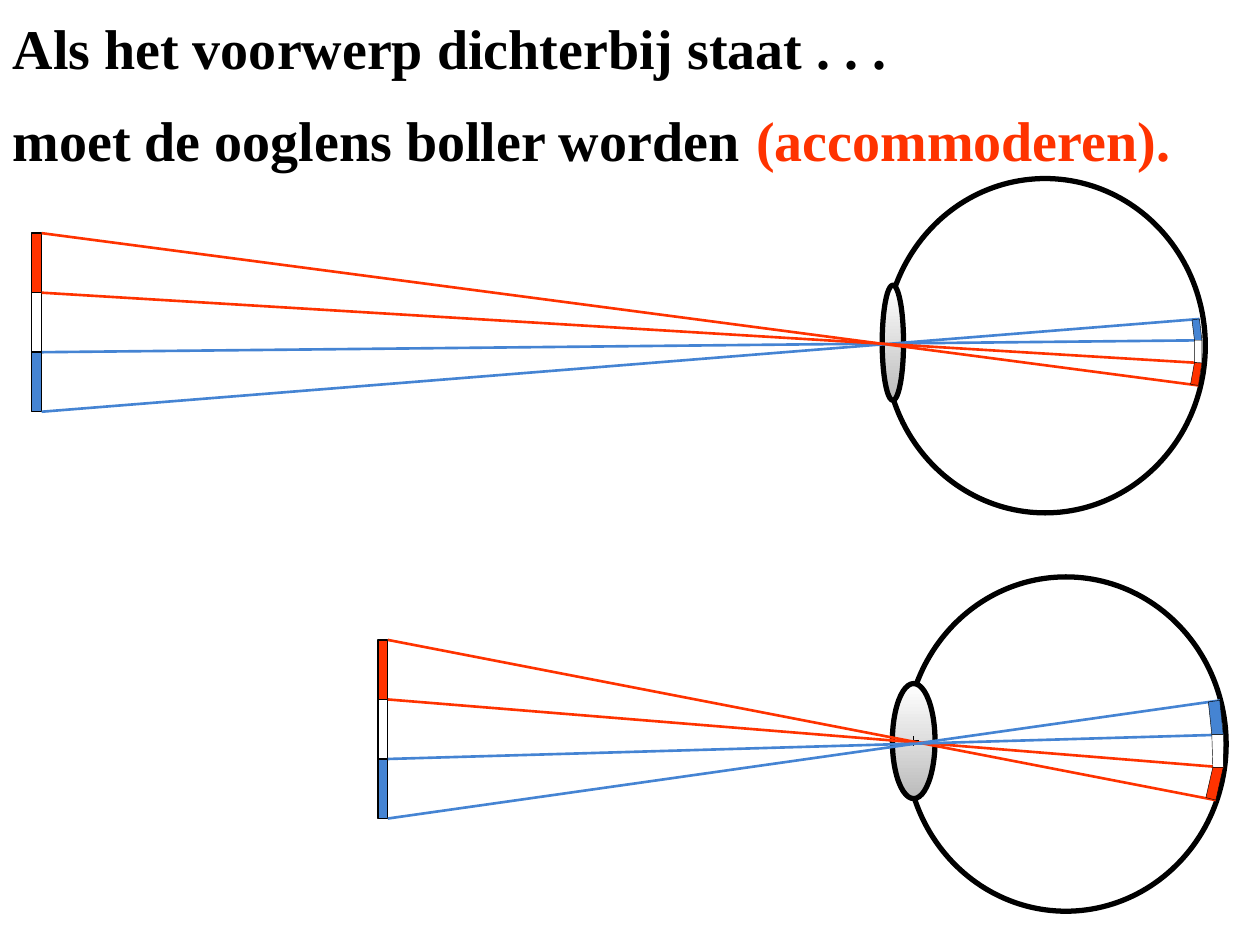
import pptx
import pptx.dml.color
import pptx.enum.shapes
import pptx.enum.text
import pptx.oxml
import pptx.oxml.ns
import pptx.util

Cm = pptx.util.Cm
Pt = pptx.util.Pt
SHAPES = pptx.enum.shapes.MSO_SHAPE

COLORS = {"black": "000000", "white": "FFFFFF", "gray": "BBBBBB",
          "red": "FF3300", "blue": "4584D3"}
BANDS = ("red", "white", "blue")
BAND_HEIGHT = 1.2
BAND_WIDTH = 0.2
EYE_RADII = (3.23, 3.37)
LENS_OFFSET = (-3.07, -0.06)
LENS_HEIGHT = 2.32

# Rays are numbered from the top of the object; retina edges run from top to bottom.
FAR = {
    "object": (0.64, 4.7), "eye": (21.07, 6.97), "lens_width": 0.43,
    "rays_behind": (2,), "rays_in_front": (0, 3, 1), "cross": False,
    "inner": ((24.03, 6.45), (24.08, 6.86), (24.08, 7.31), (24.0, 7.75)),
    "outer": ((24.18, 6.43), (24.23, 6.86), (24.23, 7.32), (24.16, 7.77)),
}
NEAR = {
    "object": (7.62, 12.9), "eye": (21.49, 15.0), "lens_width": 0.86,
    "rays_behind": (), "rays_in_front": (0, 3, 1, 2), "cross": True,
    "inner": ((24.36, 14.15), (24.43, 14.81), (24.45, 15.47), (24.31, 16.08)),
    "outer": ((24.59, 14.12), (24.66, 14.81), (24.66, 15.47), (24.51, 16.13)),
}


def color(name):
    return pptx.dml.color.RGBColor.from_string(COLORS[name])


class EyeSlide:
    """Holds the slide being drawn and its text style."""

    font = {"name": "Times New Roman", "bold": True}
    frame = {"word_wrap": True,
             "auto_size": pptx.enum.text.MSO_AUTO_SIZE.NONE,
             "vertical_anchor": pptx.enum.text.MSO_ANCHOR.TOP}
    spacing = {"alignment": pptx.enum.text.PP_ALIGN.LEFT,
               "space_before": Pt(0), "line_spacing": 1.0}

    def __init__(self, slide):
        self.slide = slide

    def text(self, placeholder, top, height, runs):
        box = {"left": 0, "top": Cm(top), "width": Cm(25.4), "height": Cm(height)}
        paragraph = placeholder.text_frame.paragraphs[0]
        properties = paragraph._p.get_or_add_pPr()
        properties.set("marL", "0")
        properties.set("indent", "0")
        properties.append(pptx.oxml.parse_xml(
            "<a:buNone %s/>" % pptx.oxml.ns.nsdecls("a")))
        for target, values in ((placeholder, box),
                               (placeholder.text_frame, self.frame),
                               (paragraph, self.spacing)):
            for name, value in values.items():
                setattr(target, name, value)
        for words, size, color_name in runs:
            run = paragraph.add_run()
            run.text = words
            for name, value in {**self.font, "size": Pt(size)}.items():
                setattr(run.font, name, value)
            run.font.color.rgb = color(color_name)

    def outline(self, shape, width, fill=None):
        shape.shadow.inherit = False
        shape.line.width = Pt(width)
        shape.line.color.rgb = color("black")
        if fill:
            shape.fill.solid()
            shape.fill.fore_color.rgb = color(fill)
        else:
            shape.fill.background()

    def preset(self, kind, left, top, width, height, line_width, fill=None):
        shape = self.slide.shapes.add_shape(
            kind, Cm(left), Cm(top), Cm(width), Cm(height))
        self.outline(shape, line_width, fill)
        return shape

    def line(self, start, end, color_name, width):
        connector = self.slide.shapes.add_connector(
            pptx.enum.shapes.MSO_CONNECTOR.STRAIGHT, *map(Cm, (*start, *end)))
        connector.line.color.rgb = color(color_name)
        connector.line.width = Pt(width)
        connector._element.spPr.append(pptx.oxml.parse_xml(
            "<a:effectLst %s/>" % pptx.oxml.ns.nsdecls("a")))

    def polygon(self, points, fill):
        corners = [(Cm(x), Cm(y)) for x, y in points]
        builder = self.slide.shapes.build_freeform(*corners[0])
        builder.add_line_segments(corners[1:], close=True)
        self.outline(builder.convert_to_shape(), 0.25, fill)

    def lens(self, center, width):
        x, y = center
        shape = self.preset(SHAPES.OVAL, x - width / 2, y - LENS_HEIGHT / 2,
                            width, LENS_HEIGHT, 3)
        shape.fill.gradient()
        shape.fill.gradient_angle = 270
        for stop, name, position in zip(shape.fill.gradient_stops,
                                        ("white", "gray"), (0, 1)):
            stop.color.rgb = color(name)
            stop.position = position

    def eyeball(self, center):
        """Draw the eye wall, open on the left where the lens sits."""
        (x, y), (radius_x, radius_y) = center, EYE_RADII
        arc = self.preset(SHAPES.ARC, x - radius_x, y - radius_y,
                          2 * radius_x, 2 * radius_y, 3)
        for index, degrees in enumerate((201, 160)):
            arc.adjustments[index] = degrees * 0.6

    def cross(self, center, arm=0.1):
        x, y = center
        self.line((x, y - arm), (x, y + arm), "black", 0.75)
        self.line((x - arm, y), (x + arm, y), "black", 0.75)

    def rays(self, setup, numbers):
        left, top = setup["object"]
        for number in numbers:
            start = (left + BAND_WIDTH, top + number * BAND_HEIGHT)
            end = setup["outer"][3 - number]
            self.line(start, end, "red" if number < 2 else "blue", 1.5)

    def eye(self, setup):
        """Draw the object, its rays, the eye and the inverted image."""
        lens_center = tuple(a + b for a, b in zip(setup["eye"], LENS_OFFSET))
        self.rays(setup, setup["rays_behind"])
        self.lens(lens_center, setup["lens_width"])
        self.eyeball(setup["eye"])
        if setup["cross"]:
            self.cross(lens_center)
        left, top = setup["object"]
        for index, band in enumerate(BANDS):
            self.preset(SHAPES.RECTANGLE, left, top + index * BAND_HEIGHT,
                        BAND_WIDTH, BAND_HEIGHT, 0.75, band)
        self.rays(setup, setup["rays_in_front"])
        inner, outer = setup["inner"], setup["outer"]
        for index, band in enumerate(reversed(BANDS)):
            self.polygon((inner[index], outer[index],
                          outer[index + 1], inner[index + 1]), band)


def main():
    presentation = pptx.Presentation()
    presentation.slide_width, presentation.slide_height = Cm(25.4), Cm(19.05)
    slide = presentation.slides.add_slide(presentation.slide_layouts[1])
    drawing = EyeSlide(slide)
    drawing.text(slide.shapes.title, 0.14, 1.6,
                 [("Als het voorwerp dichterbij staat . . .", 32, "black")])
    drawing.text(slide.placeholders[1], 1.86, 1.78,
                 [("moet de ooglens boller worden", 32, "black"),
                  (" ", 36, "black"),
                  ("(accommoderen).", 32, "red")])
    for setup in (FAR, NEAR):
        drawing.eye(setup)
    presentation.save("out.pptx")


if __name__ == "__main__":
    main()
